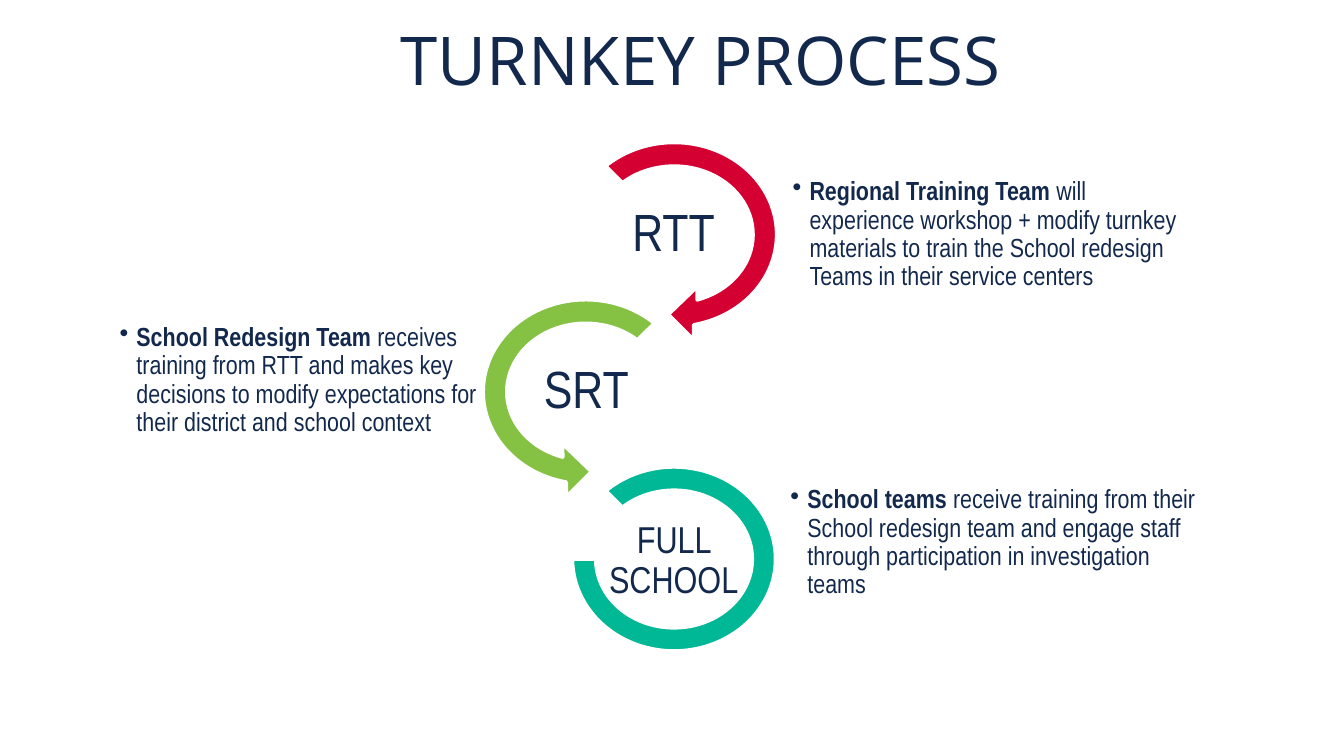
from dataclasses import dataclass
from math import cos, radians, sin, tan

from lxml.etree import SubElement
from pptx import Presentation
from pptx.dml.color import RGBColor
from pptx.enum.shapes import MSO_SHAPE
from pptx.enum.text import MSO_ANCHOR, MSO_AUTO_SIZE, PP_ALIGN
from pptx.oxml.ns import qn
from pptx.util import Cm, Pt


@dataclass(frozen=True)
class Theme:
    ink: RGBColor = RGBColor(0x12, 0x28, 0x4C)
    white: RGBColor = RGBColor(0xFF, 0xFF, 0xFF)
    red: RGBColor = RGBColor(0xD5, 0x00, 0x32)
    green: RGBColor = RGBColor(0x85, 0xC1, 0x43)
    teal: RGBColor = RGBColor(0x00, 0xB7, 0x96)
    head: str = "Open Sans"
    body: str = "Arial Narrow"
    title: int = 36
    label: int = 28
    small: int = 20
    note: int = 14


THEME = Theme()

# Hook radii and band width in cm
RX, RY, BAND = 1.94, 1.74, 0.45


def style(font, name, size, bold=False):
    font.name = name
    font.size = Pt(size)
    font.bold = bold
    font.color.rgb = THEME.ink


def frame(shape, anchor, inset=0.0):
    text = shape.text_frame
    text.word_wrap = True
    text.auto_size = MSO_AUTO_SIZE.NONE
    text.vertical_anchor = anchor
    text.margin_left = text.margin_right = Cm(inset)
    text.margin_top = text.margin_bottom = Cm(inset)
    return text


def paint(shape, color):
    shape.shadow.inherit = False
    shape.fill.solid()
    shape.fill.fore_color.rgb = color
    shape.line.color.rgb = THEME.white
    shape.line.width = Pt(2)


def write(text, words, font, size):
    text.text = words
    para = text.paragraphs[0]
    para.alignment = PP_ALIGN.CENTER
    para.line_spacing = 0.9
    style(para.runs[0].font, font, size)


def add_title(slide, box, words):
    title = slide.shapes.title
    title.left, title.top, title.width, title.height = map(Cm, box)
    write(frame(title, MSO_ANCHOR.BOTTOM), words, THEME.head, THEME.title)


def add_label(slide, box, words, size):
    shape = slide.shapes.add_textbox(*map(Cm, box))
    write(frame(shape, MSO_ANCHOR.MIDDLE, 0.04), words, THEME.body, size)


def add_note(slide, box, lead, rest, foot=0.03):
    shape = slide.shapes.add_textbox(*map(Cm, box))
    text = frame(shape, MSO_ANCHOR.MIDDLE, 0.03)
    text.margin_bottom = Cm(foot)
    para = text.paragraphs[0]
    para.level = 1
    para.line_spacing = 0.9
    # Hanging bullet
    props = para._p.get_or_add_pPr()
    props.set("marL", str(Cm(0.32)))
    props.set("indent", str(Cm(-0.32)))
    tint = SubElement(SubElement(props, qn("a:buClr")), qn("a:srgbClr"))
    tint.set("val", str(THEME.ink))
    SubElement(props, qn("a:buChar")).set("char", "•")
    style(para.font, THEME.body, THEME.note)
    for words, bold in ((lead, True), (rest, False)):
        run = para.add_run()
        run.text = words
        style(run.font, THEME.body, THEME.note, bold)


def arc(rx, ry, start, end, parts=3):
    """Start point, then two handles and an end point for each part."""
    step = radians(end - start) / parts
    pull = 4 / 3 * tan(step / 4)
    points = [(rx * cos(radians(start)), ry * sin(radians(start)))]
    for i in range(parts):
        a = radians(start) + i * step
        b = a + step
        points += [
            (rx * (cos(a) - pull * sin(a)), ry * (sin(a) + pull * cos(a))),
            (rx * (cos(b) + pull * sin(b)), ry * (sin(b) - pull * cos(b))),
            (rx * cos(b), ry * sin(b)),
        ]
    return points


def bend(shape, starts):
    """Turn each three lines that begin at the given places into a curve."""
    lines = list(shape._element.iter(qn("a:lnTo")))
    for first in starts:
        trio = lines[first:first + 3]
        curve = trio[0].makeelement(qn("a:cubicBezTo"), {})
        trio[0].addprevious(curve)
        for line in trio:
            curve.append(line[0])
            line.getparent().remove(line)


def add_hook(slide, box, color, side):
    """Curved arrow bulging right (side 1) or left (side -1)."""
    left, top, width, height = box
    rx, ry = width / 2, height / 2
    outer = arc(rx, ry, -132, 79)
    head = [(0.37, 1.99), (-0.11, 1.51), (0.44, 0.98)]
    inner = arc(rx - BAND, ry - BAND, 73, -131)
    points = outer + head + inner
    spots = [(Cm(left + rx + side * x), Cm(top + ry + y)) for x, y in points]
    pen = slide.shapes.build_freeform(*spots[0])
    pen.add_line_segments(spots[1:], close=True)
    hook = pen.convert_to_shape()
    turn = len(outer) + len(head)
    bend(hook, [*range(0, len(outer) - 1, 3), *range(turn, len(points) - 1, 3)])
    paint(hook, color)


def add_ring(slide, box, color):
    ring = slide.shapes.add_shape(MSO_SHAPE.BLOCK_ARC, *map(Cm, box))
    for i, value in enumerate((135, 108, 0.127)):
        ring.adjustments[i] = value
    paint(ring, color)


def add_stage(slide, box, color, side, label, name, size, *note):
    """One step: its arc (side 0 is the last ring), label and note."""
    if side:
        add_hook(slide, box, color, side)
    else:
        add_ring(slide, box, color)
    add_note(slide, *note)
    add_label(slide, label, name, size)


def main():
    deck = Presentation()
    deck.slide_width, deck.slide_height = Cm(25.4), Cm(14.28)
    slide = deck.slides.add_slide(deck.slide_layouts[5])
    add_title(slide, (2, 0.34, 22.48, 1.55), "TURNKEY PROCESS")

    hook = (2 * RX, 2 * RY)
    stages = (
        ((10.8, 2.69, *hook), THEME.red, 1,
         (11.48, 3.86, 2.5, 1.14), "RTT", THEME.label,
         (14.95, 3.18, 7.7, 2.51), "Regional Training Team ",
         "will experience workshop + modify turnkey materials to train "
         "the School redesign Teams in their service centers"),
        ((9.13, 5.66, *hook), THEME.green, -1,
         (9.83, 6.83, 2.5, 1.14), "SRT", THEME.label,
         (2.23, 5.69, 6.86, 3), "School Redesign Team ",
         "receives training from RTT and makes key decisions to modify "
         "expectations for their district and school context"),
        ((10.82, 8.82, 3.84, 3.48), THEME.teal, 0,
         (11.2, 10.03, 3.07, 1.14), "FULL SCHOOL", THEME.small,
         (14.91, 8.84, 7.82, 3.38), "School teams",
         " receive training from their School redesign team and engage "
         "staff through participation in investigation teams", 0.58),
    )
    for stage in stages:
        add_stage(slide, *stage)
    deck.save("out.pptx")


if __name__ == "__main__":
    main()
